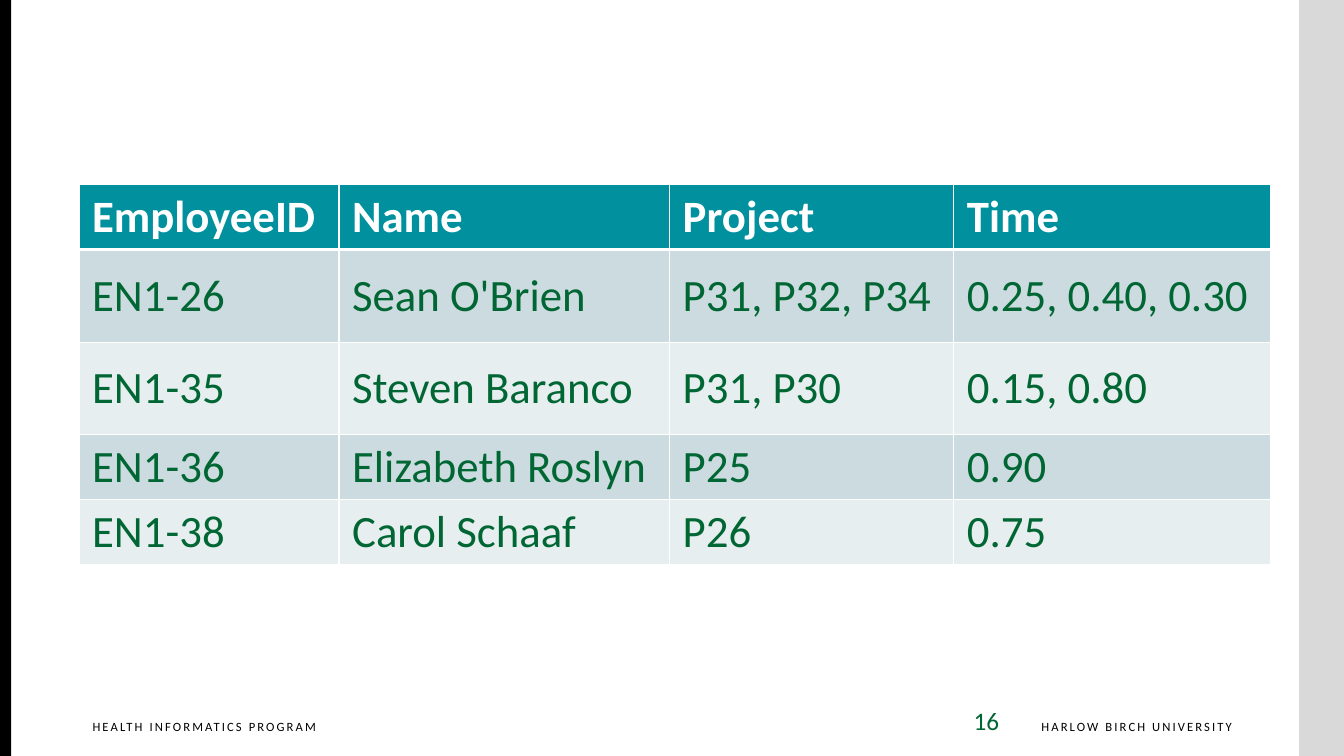
"""Build a slide with an employee project table and a footer."""
import pptx
import pptx.dml.color
import pptx.enum.shapes
import pptx.enum.text
import pptx.oxml
import pptx.oxml.ns
import pptx.util

Pt = pptx.util.Pt
ALIGN = pptx.enum.text.PP_ALIGN
FONT = "Calibri"
COLORS = {
    "white": "FFFFFF", "black": "000000", "gray": "D9D9D9", "green": "006633",
    "teal": "00909E", "band_dark": "CCDBDF", "band_light": "E7EEF0",
}
SLIDE_WIDTH, SLIDE_HEIGHT = 960, 540
SIDE_BARS = [(928, 32, "gray"), (0, 8, "black")]
LABELS = [
    ("HARLOW BIRCH UNIVERSITY", (710.64, 509.76, 169.2, 23.76), 0, 9, "black", 1.5, ALIGN.RIGHT),
    ("HEALTH INFORMATICS PROGRAM", (59.04, 509.76, 182.88, 23.76), 0, 9, "black", 1.5, ALIGN.LEFT),
    ("16", (688.32, 500.4, 223.92, 28.8), 7.2, 18, "green", 0, ALIGN.LEFT),
]
TABLE_LEFT, TABLE_TOP = 56.4, 131.8
COLUMN_WIDTHS = [185.76, 236.16, 203.04, 226.08]
ROW_HEIGHTS = [46.08, 66.24, 66.24, 46.08, 46.08]
ROWS = [
    ("EmployeeID", "Name", "Project", "Time"),
    ("EN1-26", "Sean O'Brien", "P31, P32, P34", "0.25, 0.40, 0.30"),
    ("EN1-35", "Steven Baranco", "P31, P30", "0.15, 0.80"),
    ("EN1-36", "Elizabeth Roslyn", "P25", "0.90"),
    ("EN1-38", "Carol Schaaf", "P26", "0.75"),
]


def color(name):
    return pptx.dml.color.RGBColor.from_string(COLORS[name])


def add_run(paragraph, text, size, color_name, bold=False):
    run = paragraph.add_run()
    run.text = text
    run.font.name = FONT
    run.font.size = Pt(size)
    run.font.bold = bold
    run.font.color.rgb = color(color_name)
    return run


def add_side_bar(slide, left, width, color_name):
    bar = slide.shapes.add_shape(
        pptx.enum.shapes.MSO_SHAPE.RECTANGLE, Pt(left), Pt(0), Pt(width), Pt(SLIDE_HEIGHT))
    bar.shadow.inherit = False
    bar.fill.solid()
    bar.fill.fore_color.rgb = color(color_name)
    bar.line.fill.background()


def add_label(slide, text, box, right_inset, size, color_name, spacing, alignment):
    frame = slide.shapes.add_textbox(*map(Pt, box)).text_frame
    frame.word_wrap = True
    frame.margin_right = Pt(right_inset)
    paragraph = frame.paragraphs[0]
    paragraph.alignment = alignment
    run = add_run(paragraph, text, size, color_name)
    if spacing:
        run.font._element.set("spc", str(int(spacing * 100)))


def set_borders(cell, widths):
    properties = cell._tc.get_or_add_tcPr()
    for index, (side, width) in enumerate(widths.items()):
        border = pptx.oxml.parse_xml(
            f'<a:ln{side} {pptx.oxml.ns.nsdecls("a")} w="{Pt(width)}"><a:solidFill>'
            f'<a:srgbClr val="{COLORS["white"]}"/></a:solidFill></a:ln{side}>')
        properties.insert(index, border)


def fill_cell(cell, text, row_index):
    header = row_index == 0
    fill_name = "teal" if header else ("band_light", "band_dark")[row_index % 2]
    cell.fill.solid()
    cell.fill.fore_color.rgb = color(fill_name)
    cell.vertical_anchor = pptx.enum.text.MSO_ANCHOR.MIDDLE
    cell.margin_left = cell.margin_right = Pt(9.36)
    cell.margin_top = cell.margin_bottom = Pt(3.6)
    add_run(cell.text_frame.paragraphs[0], text, 32, "white" if header else "green", header)
    set_borders(cell, {"L": 1, "R": 1, "T": 3 if row_index == 1 else 1, "B": 3 if header else 1})


def add_employee_table(slide):
    table = slide.shapes.add_table(
        len(ROWS), len(COLUMN_WIDTHS), Pt(TABLE_LEFT), Pt(TABLE_TOP),
        Pt(sum(COLUMN_WIDTHS)), Pt(sum(ROW_HEIGHTS))).table
    for column, width in zip(table.columns, COLUMN_WIDTHS):
        column.width = Pt(width)
    for row_index, (row, height, texts) in enumerate(zip(table.rows, ROW_HEIGHTS, ROWS)):
        row.height = Pt(height)
        for cell, text in zip(row.cells, texts):
            fill_cell(cell, text, row_index)


def main():
    presentation = pptx.Presentation()
    presentation.slide_width = Pt(SLIDE_WIDTH)
    presentation.slide_height = Pt(SLIDE_HEIGHT)
    slide = presentation.slides.add_slide(presentation.slide_layouts[6])
    for bar in SIDE_BARS:
        add_side_bar(slide, *bar)
    add_employee_table(slide)
    for label in LABELS:
        add_label(slide, *label)
    presentation.save("out.pptx")


if __name__ == "__main__":
    main()
